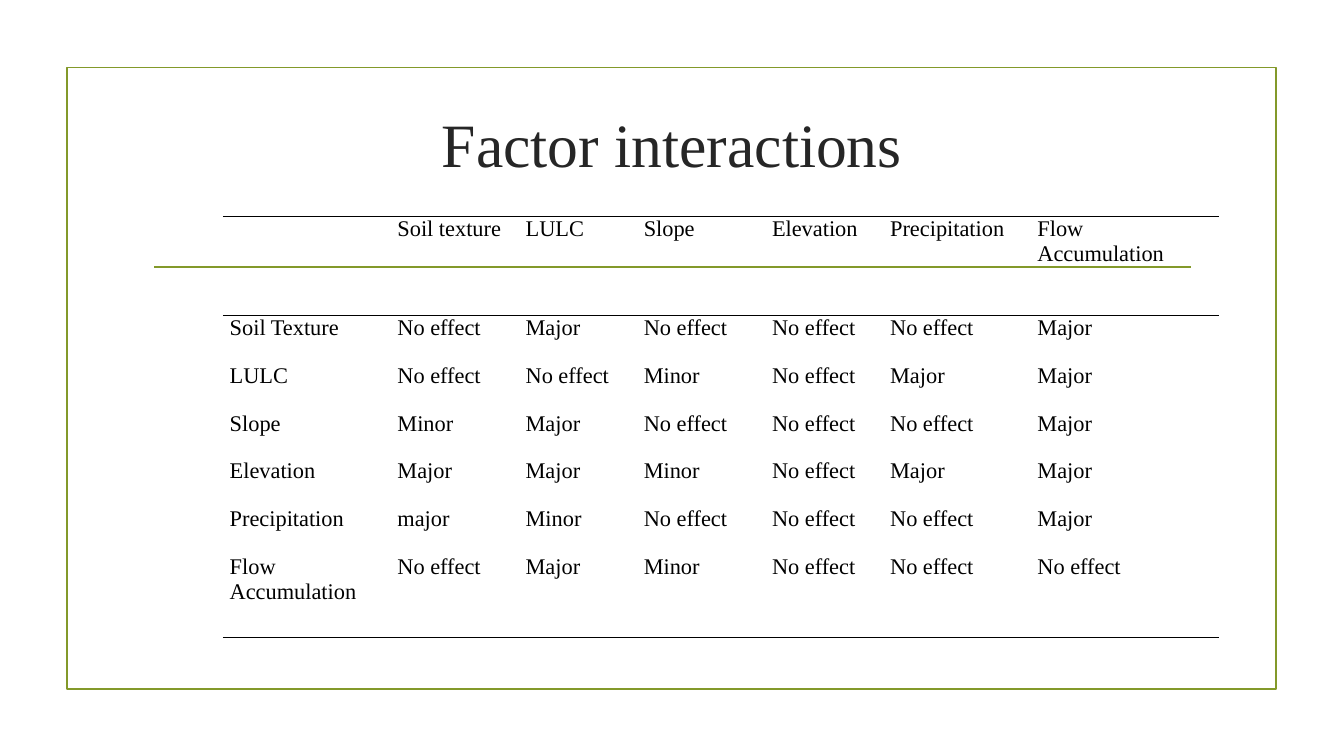
from lxml.etree import SubElement
from pptx import Presentation
from pptx.dml.color import RGBColor
from pptx.enum.shapes import MSO_CONNECTOR, MSO_SHAPE
from pptx.enum.text import MSO_ANCHOR, PP_ALIGN
from pptx.oxml.ns import qn
from pptx.util import Pt

FACTORS = ["Soil Texture", "LULC", "Slope", "Elevation", "Precipitation", "Flow Accumulation"]
HEADER = ["", "Soil texture"] + FACTORS[1:]
EFFECTS = [
    ["No effect", "Major", "No effect", "No effect", "No effect", "Major"],
    ["No effect", "No effect", "Minor", "No effect", "Major", "Major"],
    ["Minor", "Major", "No effect", "No effect", "No effect", "Major"],
    ["Major", "Major", "Minor", "No effect", "Major", "Major"],
    ["major", "Minor", "No effect", "No effect", "No effect", "Major"],
    ["No effect", "Major", "Minor", "No effect", "No effect", "No effect"],
]
COLUMN_WIDTHS = [119.8, 91.6, 84.4, 91.6, 84.4, 105.2, 135]
ROW_HEIGHTS = [70.8] + [34.1] * 5 + [59.6]


def color(value):
    return RGBColor.from_string(value)


def write(frame, text, size, ink, align=PP_ALIGN.LEFT, font="Times New Roman"):
    para = frame.paragraphs[0]
    para.alignment = align
    span = para.add_run()
    span.text = text
    span.font.size = Pt(size)
    span.font.name = font
    span.font.color.rgb = color(ink)


class SlideBuilder:
    accent = "83992A"
    title_ink = "262626"
    table_ink = "000000"
    rule_width = 1.25

    def __init__(self, page):
        self.page = page

    def style_line(self, line):
        line.color.rgb = color(self.accent)
        line.width = Pt(self.rule_width)

    def frame(self, left, top, width, height):
        box = self.page.shapes.add_shape(
            MSO_SHAPE.RECTANGLE, Pt(left), Pt(top), Pt(width), Pt(height))
        box.shadow.inherit = False
        box.fill.background()
        self.style_line(box.line)

    def rule(self, left, right, y):
        rule = self.page.shapes.add_connector(
            MSO_CONNECTOR.STRAIGHT, Pt(left), Pt(y), Pt(right), Pt(y))
        self.style_line(rule.line)
        SubElement(rule._element.spPr, qn("a:effectLst"))

    def title(self, text, left, top, width, height):
        box = self.page.shapes.add_textbox(Pt(left), Pt(top), Pt(width), Pt(height))
        box.text_frame.word_wrap = True
        box.text_frame.vertical_anchor = MSO_ANCHOR.MIDDLE
        write(box.text_frame, text, 44, self.title_ink, PP_ALIGN.CENTER)

    def border(self, cell, side, visible):
        line = SubElement(cell._tc.get_or_add_tcPr(), qn(f"a:ln{side}"), w=str(Pt(1)))
        if visible:
            fill = SubElement(line, qn("a:solidFill"))
            SubElement(fill, qn("a:srgbClr"), val=self.table_ink)
        else:
            SubElement(line, qn("a:noFill"))

    def table(self, rows, left, top, widths, heights):
        table = self.page.shapes.add_table(
            len(rows), len(widths), Pt(left), Pt(top),
            Pt(sum(widths)), Pt(sum(heights))).table
        table.first_row = table.horz_banding = False
        for column, width in zip(table.columns, widths):
            column.width = Pt(width)
        last = len(rows) - 1
        for index, (texts, height) in enumerate(zip(rows, heights)):
            table.rows[index].height = Pt(height)
            ruled = {"T": index in (0, 1), "B": index in (0, last)}
            for cell, text in zip(table.rows[index].cells, texts):
                cell.margin_left = cell.margin_right = Pt(5)
                cell.margin_top = cell.margin_bottom = Pt(0)
                for side in "LRTB":
                    self.border(cell, side, ruled.get(side, False))
                cell.fill.background()
                if text:
                    write(cell.text_frame, text, 16, self.table_ink)


def main():
    deck = Presentation()
    deck.slide_width, deck.slide_height = Pt(960), Pt(540)
    slide = SlideBuilder(deck.slides.add_slide(deck.slide_layouts[6]))

    # Frame, rule and title
    slide.frame(47.7, 48.2, 864, 444.2)
    slide.rule(110.2, 850.4, 190.8)
    slide.title("Factor interactions", 102.2, 49.7, 756, 105)

    # Interaction table
    body = [[factor] + effects for factor, effects in zip(FACTORS, EFFECTS)]
    slide.table([HEADER] + body, 159.1, 154.8, COLUMN_WIDTHS, ROW_HEIGHTS)

    deck.save("out.pptx")


if __name__ == "__main__":
    main()
